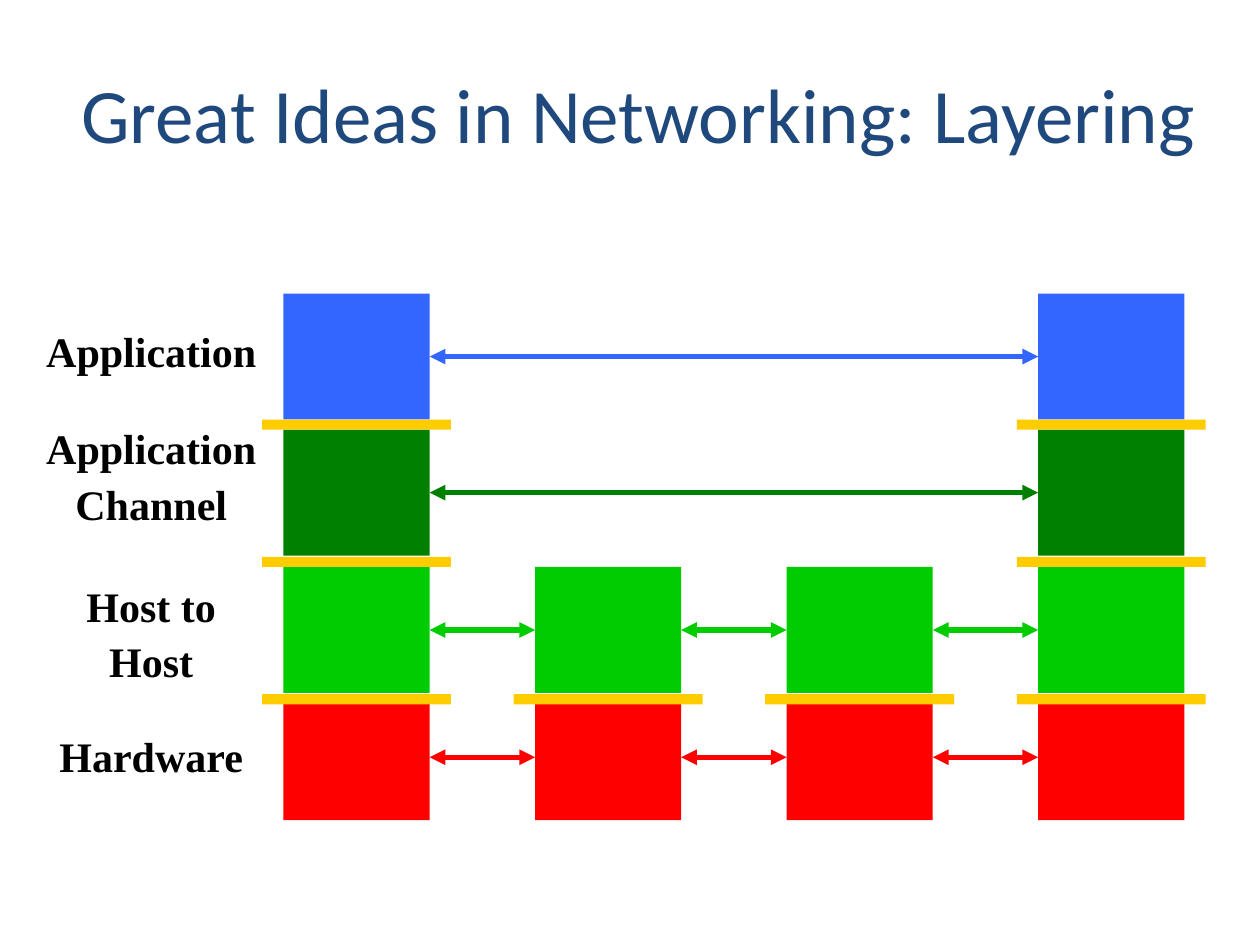
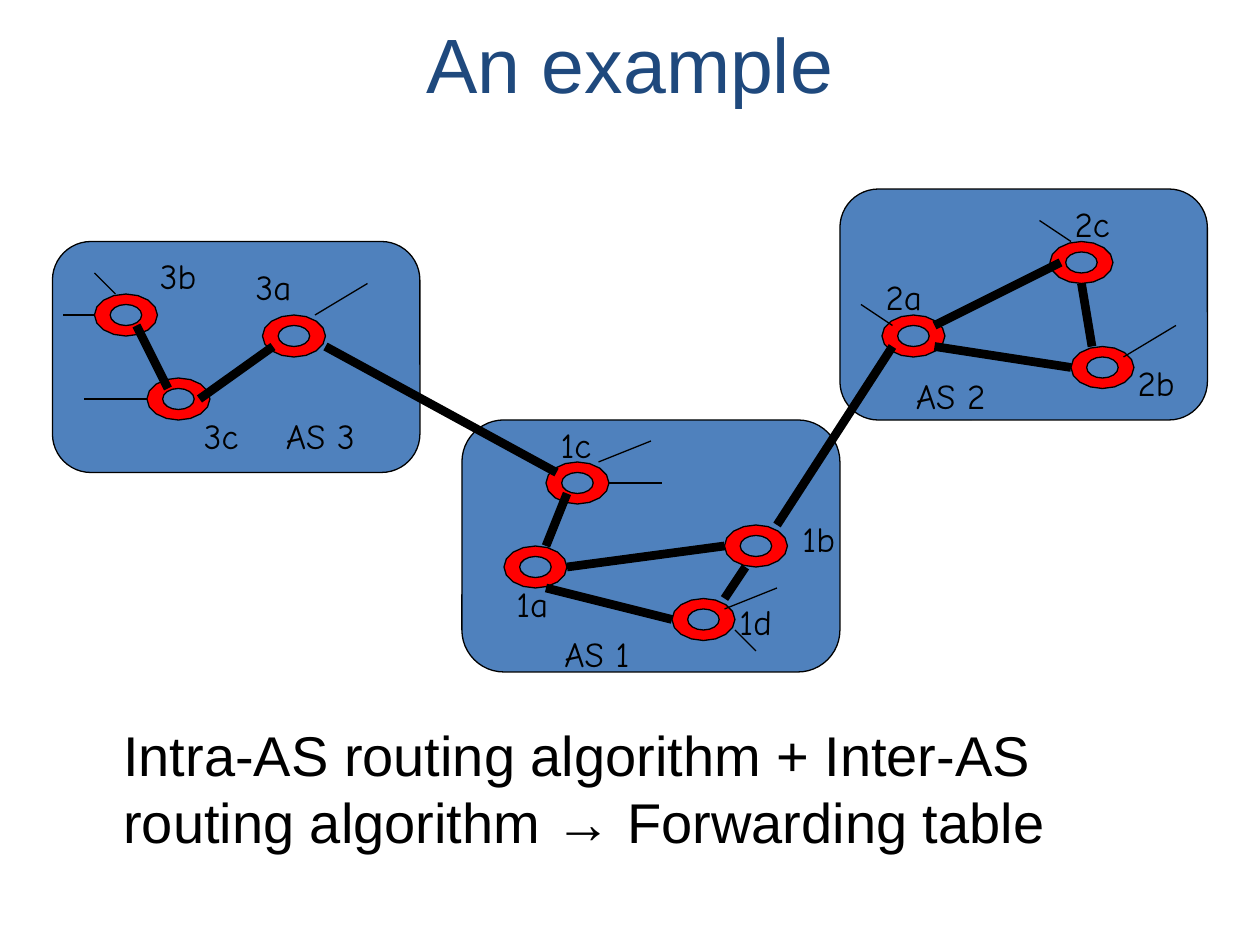
from dataclasses import dataclass
from math import cos, pi, sin

from lxml import etree
from pptx import Presentation
from pptx.dml.color import RGBColor
from pptx.enum.shapes import MSO_CONNECTOR, MSO_SHAPE
from pptx.enum.text import MSO_ANCHOR, MSO_AUTO_SIZE, PP_ALIGN
from pptx.oxml.ns import qn
from pptx.util import Inches, Pt

RECTANGLE = MSO_SHAPE.RECTANGLE
ROUNDED = MSO_SHAPE.ROUNDED_RECTANGLE
STRAIGHT = MSO_CONNECTOR.STRAIGHT
CENTER, LEFT = PP_ALIGN.CENTER, PP_ALIGN.LEFT
MIDDLE = MSO_ANCHOR.MIDDLE
NO_AUTOFIT = MSO_AUTO_SIZE.NONE
LEFT_SIDE, RIGHT_SIDE = 1, 3
TITLE_ONLY = 5


@dataclass(frozen=True)
class Theme:
    title: str = "1F497D"
    ink: str = "000000"
    bar: str = "FFCC00"
    region: str = "4F81BD"
    router: str = "FF0000"
    title_size: int = 44
    body_size: int = 32
    layer_size: int = 24
    node_size: int = 20
    hairline: float = 0.75
    arrow: float = 3
    link: float = 5


THEME = Theme()

# Layer stack: label, label top, block top, colour, columns
STACK_LEFT, STACK_RIGHT = 2.25, 8.24
STACK_PITCH = (STACK_RIGHT - STACK_LEFT) / 3
BLOCK_WIDTH, BLOCK_HEIGHT = 1.16, 1
BAR_WIDTH, BAR_HEIGHT = 1.5, 0.08
ENDS, ALL = (0, 3), (0, 1, 2, 3)
LAYERS = [
    ("Application", 2.58, 2.33, "3366FF", ENDS),
    ("Application\nChannel", 3.35, 3.41, "008000", ENDS),
    ("Host to\nHost", 4.6, 4.5, "00CC00", ALL),
    ("Hardware", 5.79, 5.51, "FF0000", ALL),
]
BARS = [(3.33, ENDS), (4.42, ENDS), (5.51, ALL)]

# Network map, on a grid of twelfths of an inch
GRID = 12
REGIONS = [(44, 40, 36, 24), (5, 23, 35, 22), (80, 18, 35, 22)]
ROUTERS = [  # label, ring centre, label position in inches
    ("3b", (12, 30), (1.17, 1.97)),
    ("3a", (28, 32), (1.93, 2.06)),
    ("3c", (17, 38), (1.52, 3.24)),
    ("1c", (55, 46), (4.35, 3.31)),
    ("1a", (51, 54), (4, 4.57)),
    ("1d", (67, 59), (5.77, 4.72)),
    ("1b", (72, 52), (6.27, 4.06)),
    ("2a", (87, 32), (6.93, 2.14)),
    ("2c", (103, 25), (8.43, 1.56)),
    ("2b", (105, 35), (8.93, 2.82)),
]
REGION_LABELS = [
    ("AS 2", (7.17, 2.92)), ("AS 3", (2.17, 3.24)), ("AS 1", (4.38, 4.97)),
]
LINKS = [
    (13, 31, 16, 37), (19, 38, 26, 33), (31, 33, 53, 45), (54, 54, 69, 52),
    (52, 56, 64, 59), (69, 57, 71, 54), (54, 47, 52, 52), (74, 50, 85, 33),
    (89, 31, 101, 25), (89, 33, 102, 35), (103, 27, 104, 33),
]
STUBS = [
    (9, 30, 6, 30), (11, 28, 9, 26), (14, 38, 8, 38), (30, 30, 35, 27),
    (57, 44, 62, 42), (58, 46, 63, 46), (85, 31, 82, 29), (107, 34, 112, 31),
    (102, 23, 99, 21), (69, 58, 74, 56), (70, 60, 72, 62),
]


def color(value):
    return RGBColor.from_string(value)


def grid(*units):
    return [Inches(unit / GRID) for unit in units]


def format_text(frame, font, size, ink, align, bold=False):
    for para in frame.paragraphs:
        para.alignment = align
        for span in para.runs:
            span.font.name = font
            span.font.size = Pt(size)
            span.font.bold = bold
            span.font.color.rgb = color(ink)


def add_page(deck, title, font, left, top, width, height):
    page = deck.slides.add_slide(deck.slide_layouts[TITLE_ONLY])
    holder = page.shapes.title
    holder.left, holder.top = Inches(left), Inches(top)
    holder.width, holder.height = Inches(width), Inches(height)
    frame = holder.text_frame
    frame.text = title
    frame.auto_size = NO_AUTOFIT
    frame.vertical_anchor = MIDDLE
    format_text(frame, font, THEME.title_size, THEME.title, CENTER)
    return page


def add_text(page, text, left, top, width, height, font, size,
             align=LEFT, bold=False, wrap=False):
    box = page.shapes.add_textbox(
        Inches(left), Inches(top), Inches(width), Inches(height))
    frame = box.text_frame
    frame.text = text
    frame.word_wrap = wrap
    format_text(frame, font, size, THEME.ink, align, bold)
    return frame


def paint(shape, fill, outline=None):
    shape.shadow.inherit = False
    shape.fill.solid()
    shape.fill.fore_color.rgb = color(fill)
    if outline:
        shape.line.color.rgb = color(outline)
        shape.line.width = Pt(THEME.hairline)
    else:
        shape.line.fill.background()


def add_block(page, left, top, width, height, fill):
    block = page.shapes.add_shape(
        RECTANGLE, Inches(left), Inches(top), Inches(width), Inches(height))
    paint(block, fill)
    return block


def add_line(page, ends, ink, width):
    line = page.shapes.add_connector(STRAIGHT, *ends)
    line.line.color.rgb = color(ink)
    line.line.width = Pt(width)
    etree.SubElement(line._element.spPr, qn("a:effectLst"))
    return line


def join_blocks(page, first, second, ink):
    arrow = add_line(page, (0, 0, 0, 0), ink, THEME.arrow)
    arrow.begin_connect(first, RIGHT_SIDE)
    arrow.end_connect(second, LEFT_SIDE)
    outline = arrow.line._get_or_add_ln()
    for end in ("a:headEnd", "a:tailEnd"):
        etree.SubElement(outline, qn(end), type="triangle")


def ellipse_points(center, radius_x, radius_y, direction=1, steps=16):
    angles = [direction * 2 * pi * step / steps for step in range(steps)]
    return [grid(center[0] + radius_x * cos(angle),
                 center[1] + radius_y * sin(angle)) for angle in angles]


def add_router(page, center):
    rim = ellipse_points(center, 3, 2)
    hole = ellipse_points(center, 1.5, 1, direction=-1)
    builder = page.shapes.build_freeform(*rim[0])
    builder.add_line_segments(rim[1:], close=True)
    builder.move_to(*hole[0])
    builder.add_line_segments(hole[1:], close=True)
    paint(builder.convert_to_shape(), THEME.router, THEME.ink)


def add_region(page, area):
    region = page.shapes.add_shape(ROUNDED, *grid(*area))
    region.adjustments[0] = 1 / 6
    paint(region, THEME.region, THEME.ink)


def column_left(column):
    return STACK_LEFT + column * STACK_PITCH


def build_layering(deck):
    page = add_page(deck, "Great Ideas in Networking: Layering", "Calibri",
                    0.39, 0.48, 9.36, 0.83)
    for label, label_top, top, fill, columns in LAYERS:
        blocks = [add_block(page, column_left(column), top,
                            BLOCK_WIDTH, BLOCK_HEIGHT, fill)
                  for column in columns]
        for first, second in zip(blocks, blocks[1:]):
            join_blocks(page, first, second, fill)
        height = 0.46 * (label.count("\n") + 1)
        frame = add_text(page, label, 0.26, label_top, 1.88, height,
                         "Times New Roman", THEME.layer_size, CENTER, True)
        for para in frame.paragraphs:
            para.line_spacing = 0.9
            para.space_before = Pt(6)
    # Interfaces between the layers
    overhang = (BAR_WIDTH - BLOCK_WIDTH) / 2
    for top, columns in BARS:
        for column in columns:
            add_block(page, column_left(column) - overhang, top,
                      BAR_WIDTH, BAR_HEIGHT, THEME.bar)


def build_example(deck):
    page = add_page(deck, "An example", "Arial", 0.5, 0, 9, 1)
    frame = add_text(
        page, "Intra-AS routing algorithm + Inter-AS routing algorithm "
        "→ Forwarding table", 0.88, 5.67, 8.62, 1.41,
        "Arial", THEME.body_size, wrap=True)
    frame.paragraphs[0].space_before = Pt(6)
    # Autonomous systems, their routers and the links
    for area in REGIONS:
        add_region(page, area)
    for _, center, _ in ROUTERS:
        add_router(page, center)
    for ends in LINKS:
        add_line(page, grid(*ends), THEME.ink, THEME.link)
    for ends in STUBS:
        add_line(page, grid(*ends), THEME.ink, THEME.hairline)
    # Labels
    labels = [(name, place, 0.51) for name, _, place in ROUTERS]
    labels += [(name, place, 0.85) for name, place in REGION_LABELS]
    for name, place, width in labels:
        add_text(page, name, *place, width, 0.43,
                 "Comic Neue", THEME.node_size)


def main():
    deck = Presentation()
    deck.slide_width, deck.slide_height = Inches(10), Inches(7.5)
    build_layering(deck)
    build_example(deck)
    deck.save("out.pptx")


if __name__ == "__main__":
    main()
